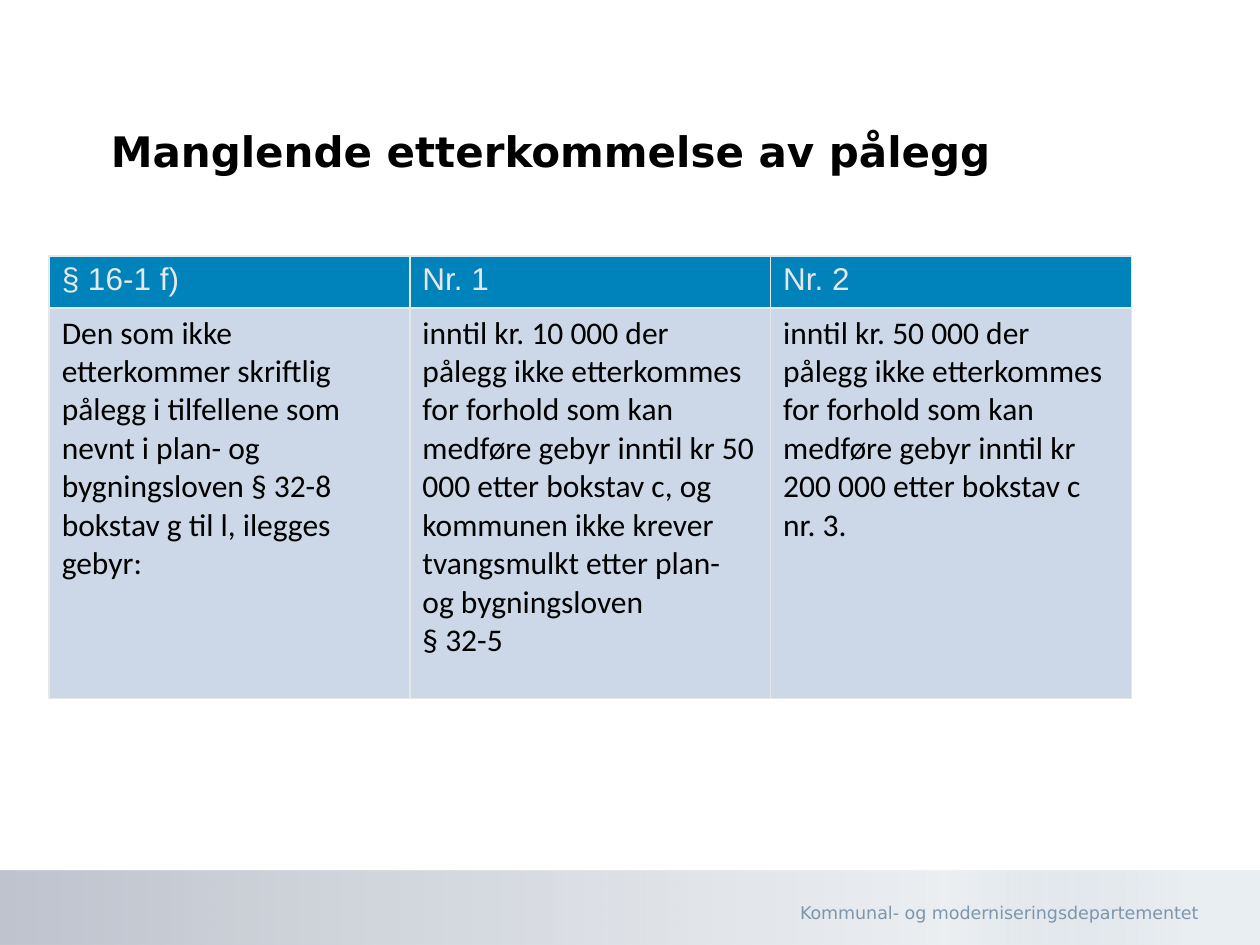
from lxml import etree
from pptx import Presentation
from pptx import util as u
from pptx.dml.color import RGBColor
from pptx.enum import shapes, text
from pptx.oxml.ns import qn

WIDE, HIGH = u.Inches(10), u.Inches(7.5)
BLACK = RGBColor(0, 0, 0)
PALE = RGBColor(0xE6, 0xE7, 0xE8)
BLUE = RGBColor(0x00, 0x82, 0xBA)
MIST = RGBColor(0xCC, 0xD8, 0xE7)
STEEL = RGBColor(0x7C, 0x96, 0xAD)
SLATE = RGBColor(0x7F, 0x89, 0x9E)
CLOUD = RGBColor(0xD9, 0xDF, 0xE5)

FADE = [(0, SLATE, 50), (75, CLOUD, 48), (94, STEEL, 16)]
TITLE = dict(name="DejaVu Sans", size=u.Pt(24), bold=True, color=BLACK)
FOOT = dict(name="DejaVu Sans", size=u.Pt(10), color=STEEL)
HEAD = dict(name="Arial", size=u.Pt(18), color=PALE)
BODY = dict(name="Calibri", size=u.Pt(18), color=BLACK)
ROWS = [
    (0.41, BLUE, HEAD, ["§ 16-1 f)", "Nr. 1", "Nr. 2"]),
    (3.1, MIST, BODY, [
        "Den som ikke etterkommer skriftlig pålegg i tilfellene som nevnt i "
        "plan- og bygningsloven § 32-8 bokstav g til l, ilegges gebyr:",
        "inntil kr. 10 000 der pålegg ikke etterkommes for forhold som kan "
        "medføre gebyr inntil kr 50 000 etter bokstav c, og kommunen ikke "
        "krever tvangsmulkt etter plan- og bygningsloven\n§ 32-5",
        "inntil kr. 50 000 der pålegg ikke etterkommes for forhold som kan "
        "medføre gebyr inntil kr 200 000 etter bokstav c nr. 3.",
    ]),
]


def share(left, top, width, height):
    """Turn shares of the slide into a box of lengths."""
    return [int(part * size) for part, size in
            zip((left, top, width, height), (WIDE, HIGH, WIDE, HIGH))]


def write(frame, words, look, align=text.PP_ALIGN.LEFT):
    """Fill a text frame and format each paragraph."""
    frame.text = words
    for para in frame.paragraphs:
        para.alignment = align
        for key, val in look.items():
            if key == "color":
                para.font.color.rgb = val
            else:
                setattr(para.font, key, val)


def tint(node, color, alpha=100):
    """Add a colour with its opacity to an XML node."""
    clr = etree.SubElement(node, qn("a:srgbClr"), val=str(color))
    if alpha < 100:
        etree.SubElement(clr, qn("a:alpha"), val=str(alpha * 1000))


def edge(cell):
    """Draw a thin pale line on all four sides of a cell."""
    props = cell._tc.get_or_add_tcPr()
    for spot, side in enumerate("LRTB"):
        line = etree.Element(qn("a:ln" + side), w=str(u.Pt(1)))
        tint(etree.SubElement(line, qn("a:solidFill")), PALE)
        props.insert(spot, line)


def title(slide, box):
    """Place the heading at the bottom of its box."""
    head = slide.shapes.title
    head.left, head.top, head.width, head.height = box
    write(head.text_frame, "Manglende etterkommelse av pålegg", TITLE)
    head.text_frame.vertical_anchor = text.MSO_ANCHOR.BOTTOM


def table(slide, box):
    """Place the fee table with equal columns."""
    grid = slide.shapes.add_table(len(ROWS), len(ROWS[0][3]), *box).table
    grid.first_row = grid.horz_banding = False
    for row, (tall, fill, look, words) in zip(grid.rows, ROWS):
        row.height = u.Inches(tall)
        for cell, word in zip(row.cells, words):
            write(cell.text_frame, word, look)
            cell.fill.solid()
            cell.fill.fore_color.rgb = fill
            edge(cell)


def footer(slide, box):
    """Place the faded band and the sender's name in it."""
    left, top, width, height = box
    band = slide.shapes.add_shape(shapes.MSO_SHAPE.RECTANGLE, *box)
    band.shadow.inherit = False
    band.line.fill.background()
    band.fill.gradient()
    band.fill.gradient_angle = 0
    stops = band._element.spPr.find(".//" + qn("a:gsLst"))
    for stop in list(stops):
        stops.remove(stop)
    for place, color, alpha in FADE:
        stop = etree.SubElement(stops, qn("a:gs"), pos=str(place * 1000))
        tint(stop, color, alpha)
    name = slide.shapes.add_textbox(
        left + int(width * 0.614), top + int(height * 0.34),
        int(width * 0.347), int(height * 0.46))
    frame = name.text_frame
    frame.word_wrap = True
    frame.vertical_anchor = text.MSO_ANCHOR.MIDDLE
    write(frame, "Kommunal- og moderniseringsdepartementet", FOOT,
          text.PP_ALIGN.RIGHT)


def main():
    """Build the slide and save it."""
    deck = Presentation()
    deck.slide_width, deck.slide_height = WIDE, HIGH
    slide = deck.slides.add_slide(deck.slide_layouts[5])
    footer(slide, share(0, 0.921, 1, 0.079))
    title(slide, share(0.078, 0.093, 0.75, 0.1))
    table(slide, share(0.039, 0.271, 0.859, 0.468))
    deck.save("out.pptx")


if __name__ == "__main__":
    main()
